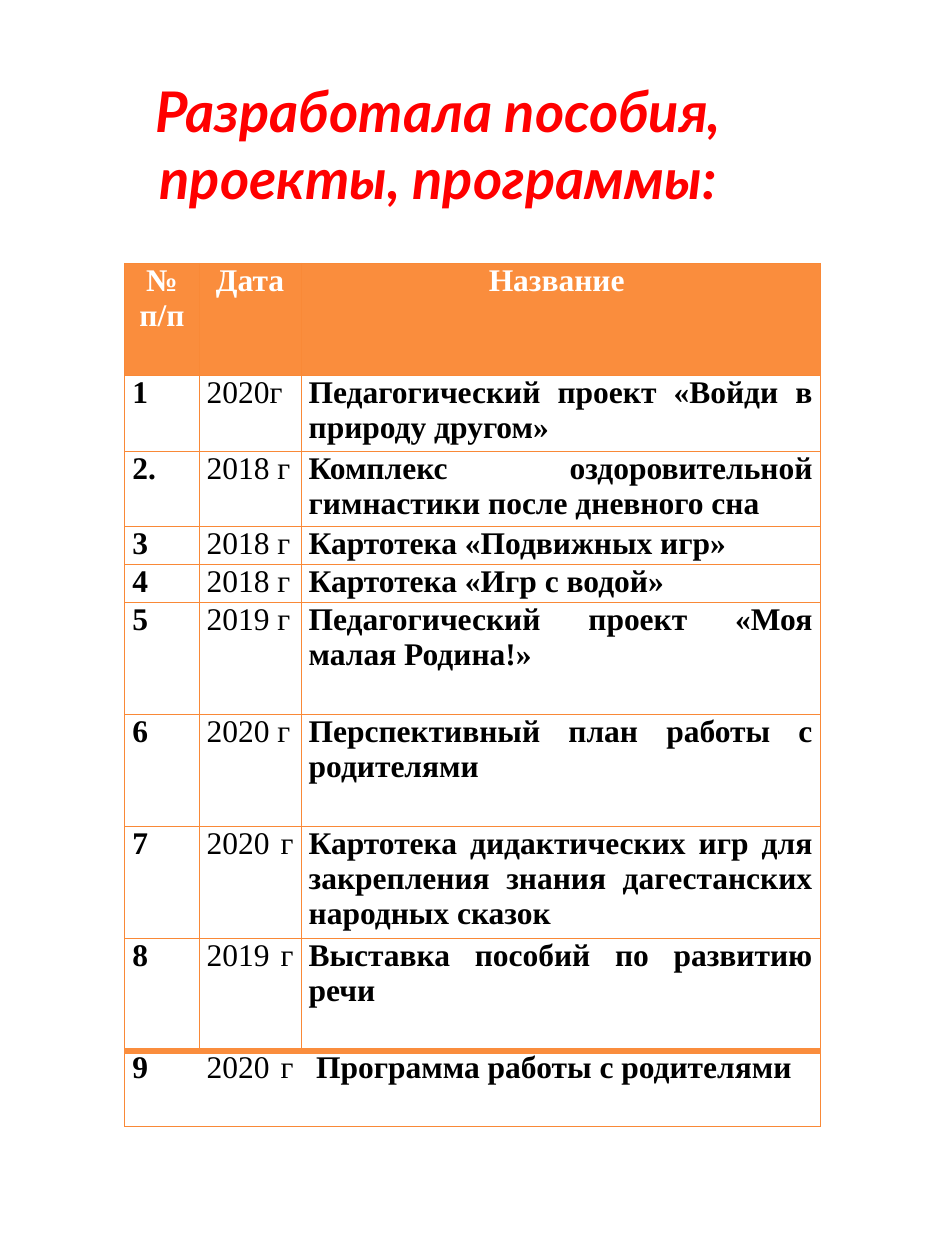
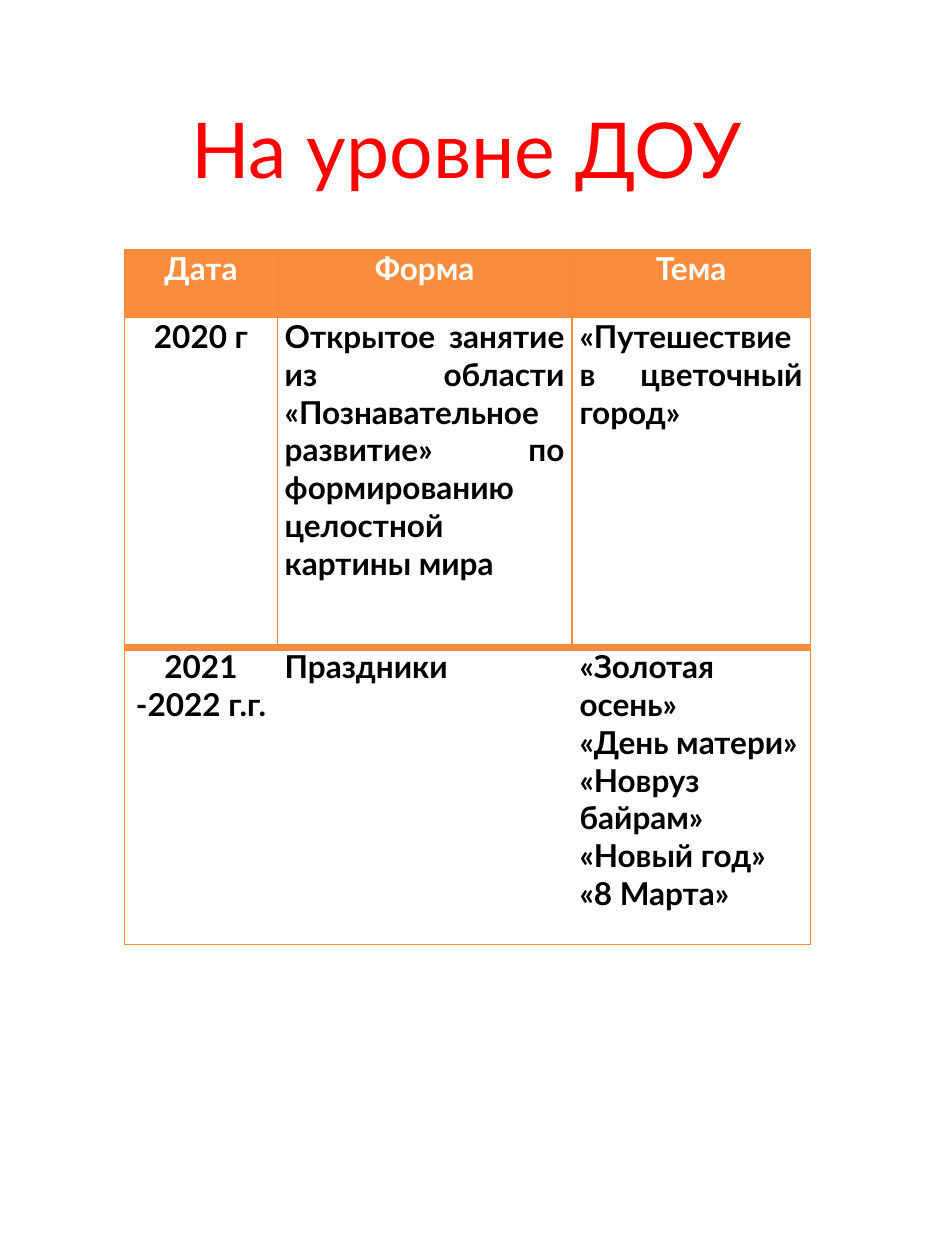
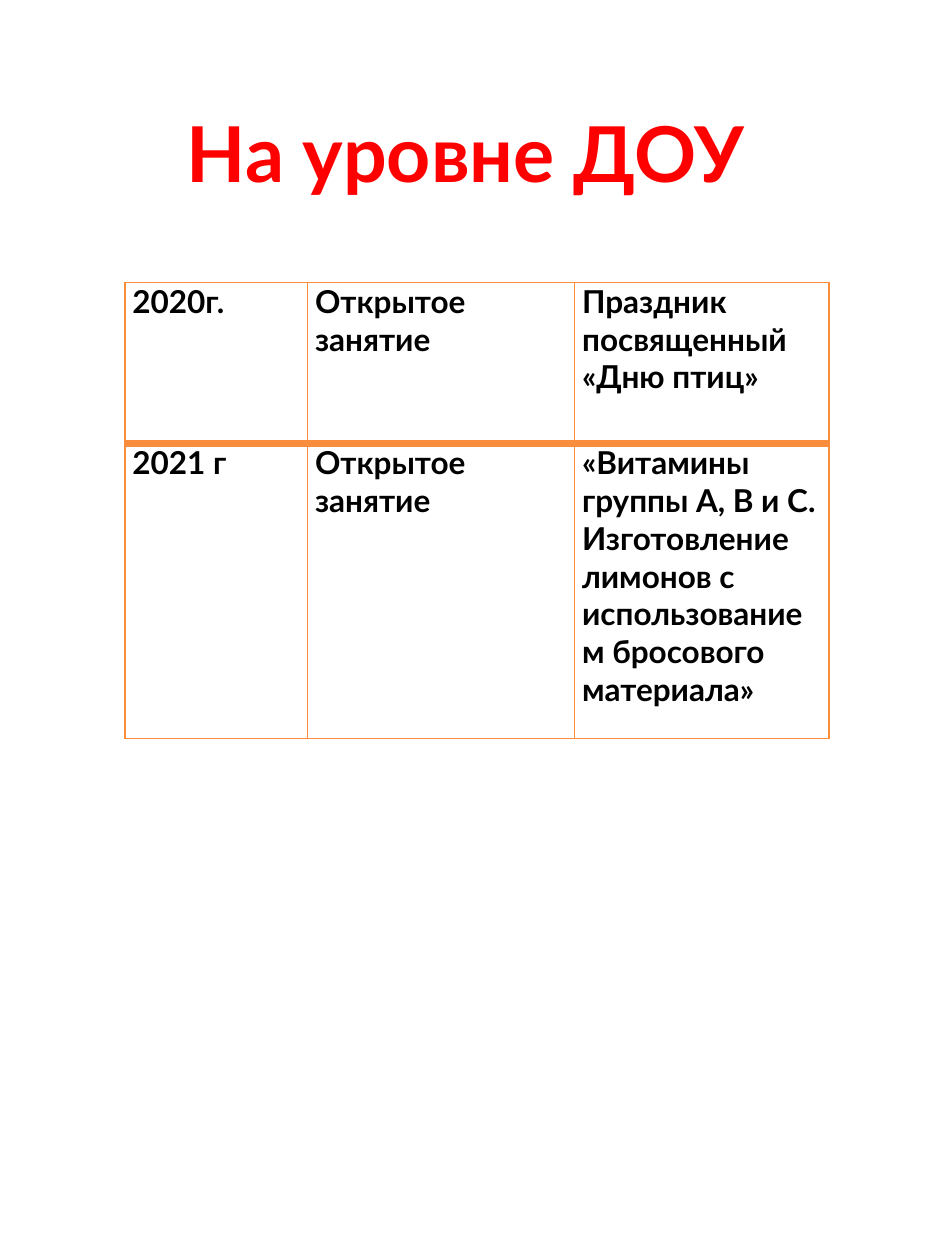
from lxml import etree
from pptx import Presentation
from pptx.dml.color import RGBColor
from pptx.enum import text
from pptx.oxml import ns
from pptx.util import Inches, Pt

LEFT, CENTER, JUSTIFY = text.PP_ALIGN.LEFT, text.PP_ALIGN.CENTER, text.PP_ALIGN.JUSTIFY


def color(value):
    return RGBColor.from_string(value)


class Deck:
    red, orange, edge, white, black = "FF0000", "FA8D3D", "F98937", "FFFFFF", "000000"
    sans, serif = "Lato", "Times New Roman"

    def __init__(self):
        self.deck = Presentation()
        self.deck.slide_width, self.deck.slide_height = Inches(7.5), Inches(10)
        self.page = None

    def add_page(self):
        self.page = self.deck.slides.add_slide(self.deck.slide_layouts[6])

    def add_lines(self, frame, lines, font, size, tint, bold=True, italic=False, align=CENTER):
        for index, line in enumerate(lines):
            para = frame.paragraphs[0] if index == 0 else frame.add_paragraph()
            para.alignment = align
            span = para.add_run()
            span.text = line
            span.font.name, span.font.size = font, Pt(size)
            span.font.bold, span.font.italic = bold, italic
            span.font.color.rgb = color(tint)

    def title(self, place, words, size=44, bold=False, italic=False, anchor=text.MSO_ANCHOR.MIDDLE):
        box = self.page.shapes.add_textbox(*map(Inches, place))
        box.text_frame.word_wrap = True
        box.text_frame.vertical_anchor = anchor
        self.add_lines(box.text_frame, [words], self.sans, size, self.red, bold, italic)

    def border(self, cell, side, width, tint):
        line = etree.SubElement(cell._tc.get_or_add_tcPr(), ns.qn("a:ln" + side))
        line.set("w", str(Pt(width)))
        if width:
            fill = etree.SubElement(line, ns.qn("a:solidFill"))
            etree.SubElement(fill, ns.qn("a:srgbClr")).set("val", tint)
        else:
            etree.SubElement(line, ns.qn("a:noFill"))

    def table(self, place, columns, heights, rows, font, aligns, header=True,
              line=0.75, tint=edge, light=(), open_last=True):
        frame = self.page.shapes.add_table(
            len(rows), len(columns), *map(Inches, (*place, sum(columns), sum(heights))))
        grid = frame.table
        grid.first_row, grid.horz_banding = header, False
        for column, width in zip(grid.columns, columns):
            column.width = Inches(width)
        last, end = len(rows) - 1, len(columns) - 1
        for r, (row, height) in enumerate(zip(rows, heights)):
            grid.rows[r].height = Inches(height)
            head = header and r == 0
            inner = 0 if open_last and r == last else line
            for c, words in enumerate(row):
                cell = grid.cell(r, c)
                cell.margin_left = cell.margin_right = Inches(0.06)
                cell.margin_top = cell.margin_bottom = 0
                self.border(cell, "L", inner if c else line, tint)
                self.border(cell, "R", inner if c < end else line, tint)
                self.border(cell, "T", 4 if r == last else line, self.orange if r == last else tint)
                self.border(cell, "B", 4 if r == last - 1 else line,
                            self.orange if r == last - 1 else tint)
                cell.fill.solid()
                cell.fill.fore_color.rgb = color(self.orange if head else self.white)
                self.add_lines(cell.text_frame, words.split("\n"), font, 18,
                               self.white if head else self.black,
                               bold=head or c not in light,
                               align=CENTER if head else aligns[c])
        return grid


def main():
    show = Deck()

    show.add_page()
    works = [
        ("№ п/п", "Дата", "Название "),
        ("1", "2020г", "Педагогический проект «Войди в природу другом»"),
        ("2.", "2018 г", "Комплекс оздоровительной гимнастики после дневного сна"),
        ("3", "2018 г", "Картотека «Подвижных игр»"),
        ("4", "2018 г", "Картотека «Игр с водой»"),
        ("5", "2019 г", "Педагогический проект «Моя малая Родина!»"),
        ("6", "2020 г", "Перспективный план работы с родителями"),
        ("7", "2020 г ", "Картотека дидактических игр для закрепления знания "
                         "дагестанских народных сказок"),
        ("8", "2019 г ", "Выставка пособий по развитию речи"),
        ("9", "2020 г ", "Программа работы с родителями"),
    ]
    heights = [0.89, 0.6, 0.6, 0.3, 0.3, 0.89, 0.89, 0.89, 0.89, 0.6]
    grid = show.table((0.99, 2.09), [0.59, 0.81, 4.12], heights, works, show.serif,
                      [JUSTIFY] * 3, light=(1,))
    grid.cell(len(works) - 1, 2).margin_left = Inches(0.12)
    show.title((0.21, 0.56, 6.54, 1.18), "Разработала пособия, проекты, программы:",
               size=32, bold=True, italic=True, anchor=text.MSO_ANCHOR.TOP)

    show.add_page()
    show.title((0.99, 0.28, 5.43, 1.79), "На уровне ДОУ")
    events = [
        ("Дата", "Форма", "Тема"),
        ("2020 г", "Открытое занятие из области «Познавательное развитие» "
                   "по формированию целостной картины мира",
         "«Путешествие в цветочный город»"),
        ("2021 -2022 г.г.", "Праздники",
         "«Золотая осень»\n«День матери»\n«Новруз байрам»\n«Новый год»\n«8 Марта»"),
    ]
    show.table((0.99, 1.98), [1.21, 2.34, 1.89], [0.54, 2.62, 2.36], events, show.sans,
               [CENTER, JUSTIFY, JUSTIFY])

    show.add_page()
    show.title((1.07, 0.59, 5.25, 1.23), "На уровне ДОУ", bold=True)
    lessons = [
        ("2020г.", "Открытое занятие", "Праздник посвященный «Дню птиц»"),
        ("2021 г", "Открытое занятие",
         "«Витамины группы А, В и С. Изготовление лимонов с использованием "
         "бросового материала»"),
    ]
    show.table((0.99, 2.24), [1.45, 2.12, 2.02], [1.28, 2.34], lessons, show.sans,
               [LEFT] * 3, header=False, line=1, tint=show.orange, open_last=False)

    show.deck.save("out.pptx")


if __name__ == "__main__":
    main()
